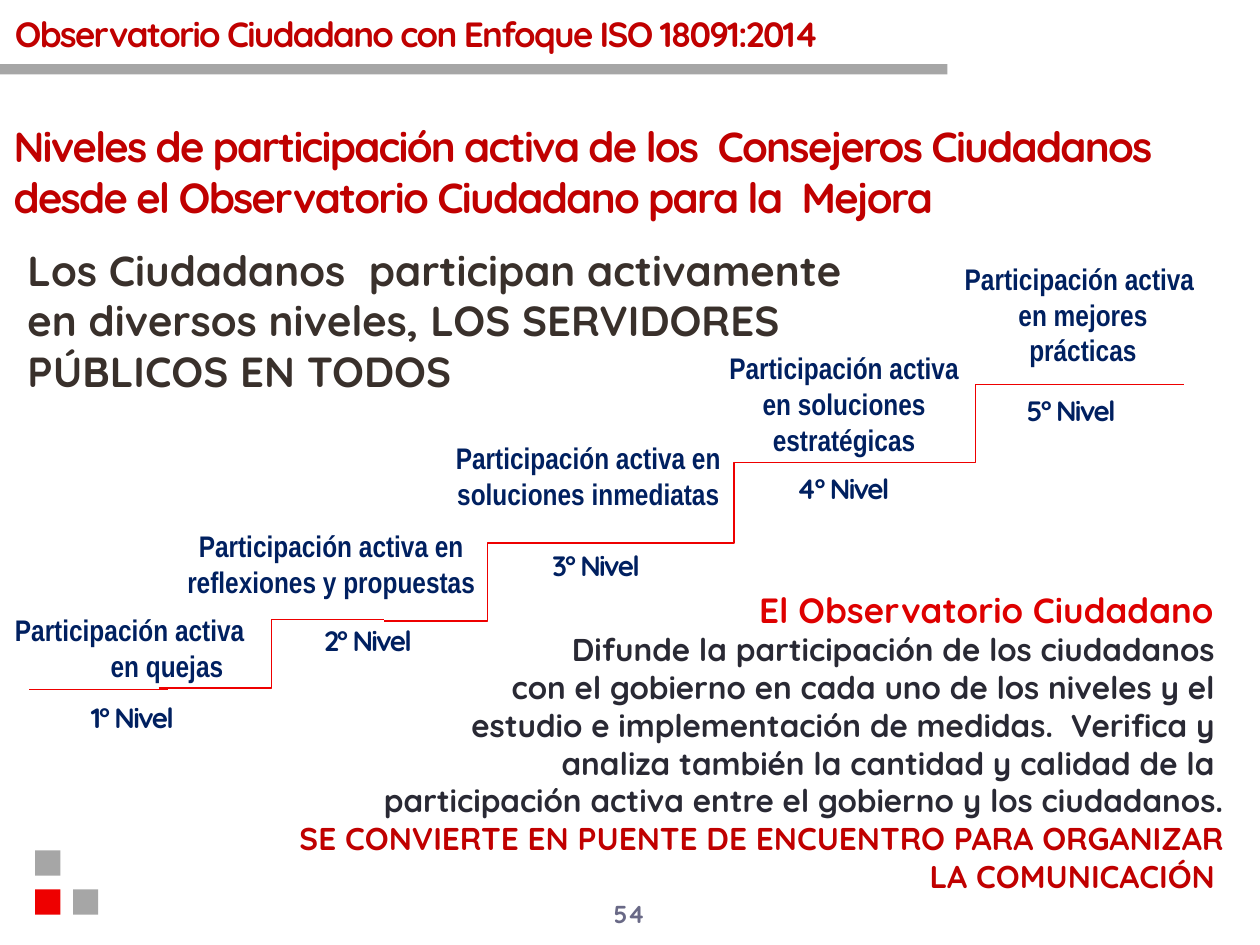
from pptx import Presentation
from pptx.dml.color import RGBColor
from pptx.enum import shapes, text
from pptx.oxml.ns import qn
from pptx.util import Inches, Pt
from lxml import etree

RED = RGBColor(0xEE, 0x00, 0x00)
BRIGHT_RED = RGBColor(0xDE, 0x00, 0x00)
DARK_RED = RGBColor(0xC0, 0x00, 0x00)
GRAY = RGBColor(0xA6, 0xA6, 0xA6)
NAVY = RGBColor(0x00, 0x20, 0x60)
BROWN = RGBColor(0x39, 0x30, 0x2B)
INK = RGBColor(0x29, 0x29, 0x34)
SLATE = RGBColor(0x69, 0x69, 0x86)

ROUND_FONT = "Quicksand"
NARROW_FONT = "Arial Narrow"
LEFT, CENTER, RIGHT = text.PP_ALIGN.LEFT, text.PP_ALIGN.CENTER, text.PP_ALIGN.RIGHT
TOP, MIDDLE = text.MSO_ANCHOR.TOP, text.MSO_ANCHOR.MIDDLE

LEVEL_NAMES = [  # left, top, width, height, anchor
    (0.45, 5.51, 1.25, 0.55, TOP),
    (2.32, 4.93, 1.25, 0.31, MIDDLE),
    (4.13, 4.21, 1.25, 0.55, MIDDLE),
    (6.09, 3.6, 1.25, 0.55, MIDDLE),
    (7.9, 2.98, 1.25, 0.55, MIDDLE),
]
LEVEL_TEXTS = [
    ((7.55, 2.02, 2.09, 0.96), [("Participación activa ", CENTER), ("en mejores prácticas", CENTER)]),
    ((5.57, 2.73, 2.26, 0.96), [("Participación activa en soluciones estratégicas", CENTER)]),
    ((3.5, 3.44, 2.34, 0.67), [("Participación activa en soluciones inmediatas", CENTER)]),
    ((1.38, 4.14, 2.5, 0.67), [("Participación activa en reflexiones y propuestas", CENTER)]),
    ((0.02, 4.81, 2.61, 0.67), [("Participación activa", LEFT), ("en quejas", CENTER)]),
]
STEPS = [
    (1.26, 5.46, 3.05, 4.92),
    (3.05, 4.93, 4.69, 4.31),
    (4.69, 4.31, 6.96, 3.67),
    (6.88, 3.67, 8.6, 3.05),
]
STAIR_ENDS = [(8.6, 3.05, 9.4, 3.05), (1.33, 5.47, 0.23, 5.47)]
OBSERVATORY_LINES = [
    "Difunde la participación de los ciudadanos ",
    "con el gobierno en cada uno de los niveles y el ",
    "estudio e implementación de medidas.  Verifica y ",
    "analiza también la cantidad y calidad de la ",
    "participación activa entre el gobierno y los ciudadanos.",
]


def add_block(page, place, anchor=TOP):
    box = page.shapes.add_textbox(*map(Inches, place))
    box.text_frame.word_wrap = True
    box.text_frame.vertical_anchor = anchor
    return box.text_frame


def write(para, words, size, color, align=LEFT, font=ROUND_FONT, spacing=0):
    """Fill one bold paragraph; spacing is the letter spacing in points."""
    span = para.add_run()
    span.text = words
    para.alignment = align
    para.font.name = font
    para.font.size = Pt(size)
    para.font.bold = True
    para.font.color.rgb = color
    if spacing:
        span._r.get_or_add_rPr().set("spc", str(spacing * 100))


def add_text(page, place, words, size, color, align=LEFT, anchor=TOP, spacing=0):
    frame = add_block(page, place, anchor)
    write(frame.paragraphs[0], words, size, color, align, spacing=spacing)


def add_paragraphs(page, place, rows):
    """Each row holds the arguments of write after the paragraph."""
    frame = add_block(page, place)
    for index, row in enumerate(rows):
        para = frame.add_paragraph() if index else frame.paragraphs[0]
        write(para, *row)


def add_bar(page, place, color):
    bar = page.shapes.add_shape(shapes.MSO_SHAPE.RECTANGLE, *map(Inches, place))
    bar.shadow.inherit = False
    bar.fill.solid()
    bar.fill.fore_color.rgb = color
    bar.line.fill.background()


def add_line(page, kind, ends):
    line = page.shapes.add_connector(kind, *map(Inches, ends))
    line.line.color.rgb = RED
    line.line.width = Pt(0.75)
    etree.SubElement(line._element.spPr, qn("a:effectLst"))


def add_stairs(page):
    for ends in STEPS:
        add_line(page, shapes.MSO_CONNECTOR.ELBOW, ends)
    for ends in STAIR_ENDS:
        add_line(page, shapes.MSO_CONNECTOR.STRAIGHT, ends)
    for number, (*place, anchor) in enumerate(LEVEL_NAMES, 1):
        add_text(page, place, f"{number}° Nivel ", 16, NAVY, CENTER, anchor, spacing=-1)
    for place, rows in LEVEL_TEXTS:
        add_paragraphs(page, place, [(words, 17, NAVY, align, NARROW_FONT) for words, align in rows])


def main():
    deck = Presentation()
    deck.slide_width, deck.slide_height = Inches(10), Inches(7.5)
    page = deck.slides.add_slide(deck.slide_layouts[6])

    add_bar(page, (0, 0.51, 7.52, 0.08), GRAY)
    for left, top, color in [(0.28, 7.06, RED), (0.58, 7.06, GRAY), (0.28, 6.75, GRAY)]:
        add_bar(page, (left, top, 0.2, 0.2), color)
    add_text(page, (4.41, 7.07, 1.17, 0.36), "54", 14, SLATE, CENTER, MIDDLE)

    add_paragraphs(page, (2.12, 4.62, 7.69, 2.56), [
        ("El Observatorio Ciudadano ", 20, BRIGHT_RED, RIGHT),
        *[(words, 18, INK, RIGHT) for words in OBSERVATORY_LINES],
        ("SE CONVIERTE EN PUENTE DE ENCUENTRO PARA ORGANIZAR LA COMUNICACIÓN ",
         18, DARK_RED, RIGHT),
    ])
    add_stairs(page)
    add_text(page, (0.12, 1.89, 6.94, 1.31),
             "Los Ciudadanos  participan activamente en diversos niveles, "
             "LOS SERVIDORES PÚBLICOS EN TODOS", 24, BROWN)
    add_text(page, (0.01, 0.91, 9.7, 0.87),
             "Niveles de participación activa de los  Consejeros Ciudadanos "
             "desde el Observatorio Ciudadano para la  Mejora", 24, DARK_RED, spacing=-1)
    add_text(page, (0.02, 0.05, 9.39, 0.87),
             "Observatorio Ciudadano con Enfoque ISO 18091:2014", 20, DARK_RED, spacing=-1)
    deck.save("out.pptx")


if __name__ == "__main__":
    main()
